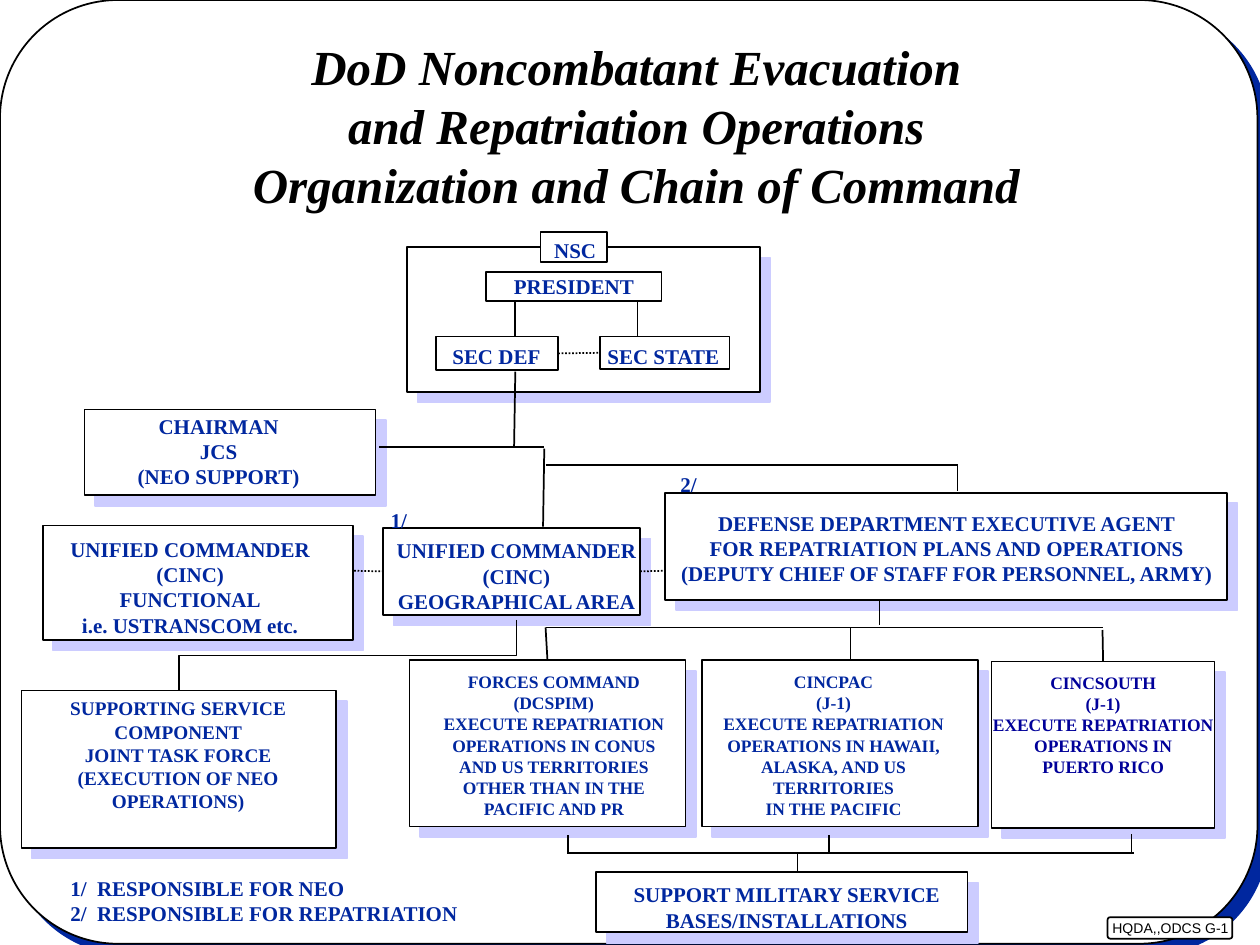
from lxml.etree import SubElement
from pptx import Presentation
from pptx.dml.color import RGBColor
from pptx.enum.dml import MSO_LINE
from pptx.enum.shapes import MSO_CONNECTOR, MSO_SHAPE
from pptx.enum.text import MSO_ANCHOR, MSO_AUTO_SIZE, PP_ALIGN
from pptx.oxml.ns import qn
from pptx.util import Inches, Pt

BLACK = RGBColor(0x00, 0x00, 0x00)
WHITE = RGBColor(0xFF, 0xFF, 0xFF)
BLUE = RGBColor(0x00, 0x27, 0x9F)
NAVY = RGBColor(0x00, 0x00, 0x99)
LILAC = RGBColor(0xCC, 0xCC, 0xFF)
SERIF = "Times New Roman"

TITLE = ["DoD Noncombatant Evacuation", "and Repatriation Operations",
         "Organization and Chain of Command"]

# name: (left, top, width, height), shadow colour
BOXES = {
    "top": ((3.23, 1.96, 2.8, 1.15), LILAC),
    "chair": ((0.67, 3.25, 2.31, 0.68), LILAC),
    "function": ((0.34, 4.17, 2.46, 0.91), LILAC),
    "region": ((3.04, 4.19, 2.04, 0.69), LILAC),
    "service": ((0.17, 5.48, 2.5, 1.25), LILAC),
    "agent": ((5.28, 3.91, 4.46, 0.85), LILAC),
    "bases": ((4.73, 6.92, 2.95, 0.48), LILAC),
    "forces": ((3.25, 5.24, 2.19, 1.32), LILAC),
    "pacific": ((5.57, 5.24, 2.19, 1.32), LILAC),
    "south": ((7.87, 5.25, 1.77, 1.32), LILAC),
    "nsc": ((4.29, 1.84, 0.53, 0.24), None),
    "president": ((3.86, 2.16, 1.39, 0.23), None),
    "defense": ((3.46, 2.67, 0.97, 0.27), None),
    "state": ((4.76, 2.67, 1.03, 0.26), None),
}

# (left, top, width, height), size, wrap, lines
LABELS = [
    ((4.3, 1.84, 0.53, 0.3), 12, False, ["NSC"]),
    ((3.49, 2.68, 0.9, 0.3), 12, False, ["SEC DEF"]),
    ((4.71, 2.68, 1.11, 0.3), 12, False, ["SEC STATE"]),
    ((0.99, 3.23, 1.49, 0.7), 12, False, ["CHAIRMAN", "JCS", "(NEO SUPPORT)"]),
    ((0.46, 4.21, 2.1, 0.9), 12, False,
     ["UNIFIED COMMANDER", "(CINC)", "FUNCTIONAL", "i.e. USTRANSCOM etc."]),
    ((3.05, 4.22, 2.1, 0.7), 12, False,
     ["UNIFIED COMMANDER", "(CINC)", "GEOGRAPHICAL AREA"]),
    ((5.28, 4.0, 4.47, 0.7), 12, False,
     ["DEFENSE DEPARTMENT EXECUTIVE AGENT",
      "FOR REPATRIATION PLANS AND OPERATIONS",
      "(DEPUTY CHIEF OF STAFF FOR PERSONNEL, ARMY)"]),
    ((0.33, 5.48, 2.17, 1.02), 11, True,
     ["SUPPORTING SERVICE COMPONENT", "JOINT TASK FORCE",
      "(EXECUTION OF NEO OPERATIONS)"]),
    ((3.34, 5.28, 2.11, 1.27), 10, True,
     ["FORCES COMMAND", "(DCSPIM)", "EXECUTE REPATRIATION",
      "OPERATIONS IN CONUS", "AND US TERRITORIES", "OTHER THAN IN THE",
      "PACIFIC AND PR"]),
    ((5.56, 5.28, 2.11, 1.27), 10, True,
     ["CINCPAC", "(J-1)", "EXECUTE REPATRIATION", "OPERATIONS IN HAWAII,",
      "ALASKA, AND US", "TERRITORIES", "IN THE PACIFIC"]),
    ((4.91, 6.95, 2.67, 0.5), 12, False,
     ["SUPPORT MILITARY SERVICE", "BASES/INSTALLATIONS"]),
    ((3.0, 3.98, 0.33, 0.3), 12, False, ["1/"]),
    ((5.3, 3.69, 0.33, 0.3), 12, False, ["2/"]),
]
SOUTH = ["CINCSOUTH", "(J-1)", "EXECUTE REPATRIATION", "OPERATIONS IN",
         "PUERTO RICO"]
NOTES = ["1/  RESPONSIBLE FOR NEO", "2/  RESPONSIBLE FOR REPATRIATION"]

# An end is a point, or a box name with the number of its side.
LINES = [
    ((4.09, 2.39), (4.09, 2.67)),
    ((5.06, 2.4), (5.06, 2.67)),
    ((4.09, 2.95), (4.08, 3.55)),
    ((3.01, 3.55), (4.32, 3.55)),
    ((4.32, 3.56), (4.31, 4.18)),
    ((4.33, 3.69), (7.6, 3.69)),
    ((7.6, 3.69), (7.6, 3.9)),
    ((6.98, 4.77), (6.98, 4.96)),
    ((4.33, 4.98), ("forces", 0)),
    ((6.75, 4.98), (6.75, 5.24)),
    ((8.75, 5.0), ("south", 0)),
    ((4.51, 6.63), (4.51, 6.77)),
    ((6.58, 6.63), (6.58, 6.77)),
    ((8.98, 6.62), (8.98, 6.76)),
    ((4.5, 6.77), (9.0, 6.77)),
    ((6.33, 6.77), (6.33, 6.91)),
]
DOTTED = [
    (("defense", 3), ("state", 1)),
    ((2.81, 4.53), ("region", 1)),
    (("region", 3), (5.28, 4.53)),
]


def inches(vals):
    return [Inches(v) for v in vals]


def add_box(place, shade=None, kind=MSO_SHAPE.RECTANGLE):
    box = shapes.add_shape(kind, *inches(place))
    box.shadow.inherit = False
    box.fill.solid()
    box.fill.fore_color.rgb = WHITE
    box.line.color.rgb = BLACK
    box.line.width = Pt(1)
    if kind == MSO_SHAPE.ROUNDED_RECTANGLE:
        box.adjustments[0] = 0.125
    if shade is not None:
        fx = box._element.spPr.find(qn("a:effectLst"))
        drop = SubElement(fx, qn("a:outerShdw"), dist=str(Pt(8.5)),
                          dir="2700000", algn="ctr", rotWithShape="0")
        SubElement(drop, qn("a:srgbClr"), val=str(shade))
    return box


def write(frame, lines, size, color=BLUE, wrap=False, align=PP_ALIGN.CENTER,
          face=SERIF, bold=True, italic=False):
    frame.word_wrap = wrap
    frame.text = "\n".join(lines)
    for para in frame.paragraphs:
        para.alignment = align
        for run in para.runs:
            font = run.font
            font.name, font.size = face, Pt(size)
            font.bold, font.italic = bold, italic
            font.color.rgb = color


def add_text(place, lines, size, **style):
    frame = shapes.add_textbox(*inches(place)).text_frame
    write(frame, lines, size, **style)
    frame.auto_size = MSO_AUTO_SIZE.SHAPE_TO_FIT_TEXT
    return frame


def add_line(start, end, width=1, kind=MSO_CONNECTOR.STRAIGHT):
    ends = [(0, 0) if isinstance(e[0], str) else e for e in (start, end)]
    line = shapes.add_connector(kind, *inches(ends[0] + ends[1]))
    for spot, join in ((start, line.begin_connect), (end, line.end_connect)):
        if isinstance(spot[0], str):
            join(boxes[spot[0]], spot[1])
    line.line.color.rgb = BLACK
    line.line.width = Pt(width)
    SubElement(line._element.spPr, qn("a:effectLst"))
    return line


deck = Presentation()
deck.slide_width, deck.slide_height = Inches(10), Inches(7.5)
shapes = deck.slides.add_slide(deck.slide_layouts[6]).shapes

add_box((0, 0, 9.98, 7.49), BLUE, MSO_SHAPE.ROUNDED_RECTANGLE)
add_box((8.79, 7.28, 0.99, 0.17), kind=MSO_SHAPE.ROUNDED_RECTANGLE)
add_text((8.73, 7.25, 1.26, 0.23), ["HQDA,,ODCS G-1"], 8, color=BLACK,
         wrap=True, align=PP_ALIGN.LEFT, face="Arial", bold=False)

head = add_text((1.92, 0.25, 6.26, 1.48), TITLE, 28, color=BLACK, italic=True)
head.margin_left = head.margin_right = Inches(0.08)
head.margin_top = head.margin_bottom = Inches(0.04)

boxes = {name: add_box(*spec_) for name, spec_ in BOXES.items()}
for ends in LINES:
    add_line(*ends)
for ends in DOTTED:
    add_line(*ends).line.dash_style = MSO_LINE.ROUND_DOT
add_line((4.33, 4.98), (8.75, 4.98), 0.75)

# Turned a quarter so that the elbow leaves downwards
elbow = add_line((2.48, 3.86), (3.04, 6.54), 0.75, MSO_CONNECTOR.ELBOW)
elbow._element.spPr.find(qn("a:xfrm")).set("rot", "5400000")

for place, size, wrap, lines in LABELS:
    add_text(place, lines, size, wrap=wrap)
add_text((0.46, 6.9, 3.31, 0.5), NOTES, 12, align=PP_ALIGN.LEFT)

write(boxes["president"].text_frame, ["PRESIDENT"], 12)
south = boxes["south"].text_frame
write(south, SOUTH, 10, color=NAVY)
south.vertical_anchor = MSO_ANCHOR.TOP
south.margin_top = Inches(0.08)

deck.save("out.pptx")
